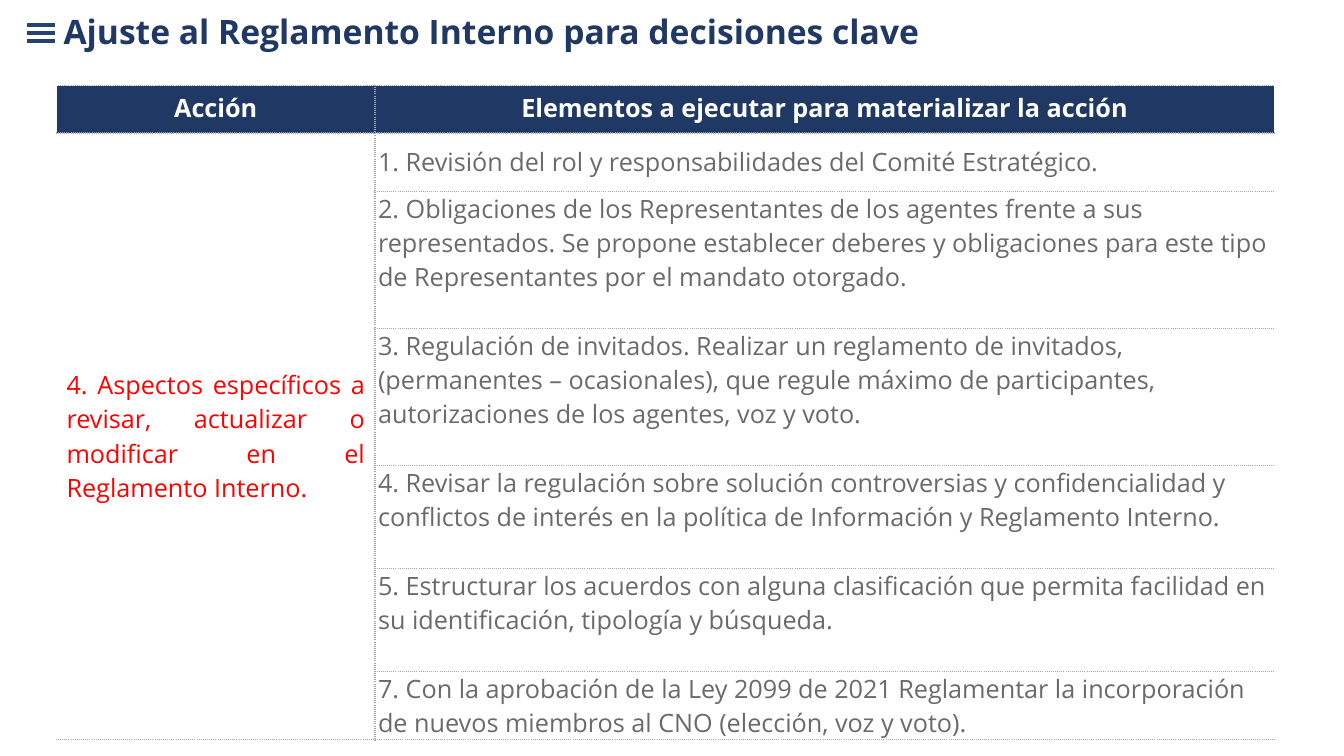
from lxml.etree import SubElement
from pptx import Presentation
from pptx.dml.color import RGBColor
from pptx.enum.shapes import MSO_CONNECTOR as CONN
from pptx.enum.text import MSO_ANCHOR as ANCHOR, MSO_AUTO_SIZE as AUTO, PP_ALIGN as ALIGN
from pptx.oxml import parse_xml
from pptx.oxml.ns import nsdecls, qn
from pptx.util import Inches, Pt

NAVY = RGBColor(0x20, 0x38, 0x64)
ICON = RGBColor(0x27, 0x44, 0x70)
RED = RGBColor(0xFF, 0x00, 0x00)
GRAY = RGBColor(0x6A, 0x6A, 0x6A)
BORDER = RGBColor(0xA6, 0xA6, 0xA6)
WHITE = RGBColor(0xFF, 0xFF, 0xFF)

HEADERS = ["Acción", "Elementos a ejecutar para materializar la acción"]
ACTION = "4. Aspectos específicos a revisar, actualizar o modificar en el Reglamento Interno."
ELEMENTS = [
    (0.58, "1. Revisión del rol y responsabilidades del Comité Estratégico."),
    (1.36, "2. Obligaciones de los Representantes de los agentes frente a sus "
           "representados. Se propone establecer deberes y obligaciones para este "
           "tipo de Representantes por el mandato otorgado."),
    (1.36, "3. Regulación de invitados. Realizar un reglamento de invitados, "
           "(permanentes – ocasionales), que regule máximo de participantes, "
           "autorizaciones de los agentes, voz y voto."),
    (1.02, "4. Revisar la regulación sobre solución controversias y confidencialidad "
           "y conflictos de interés en la política de Información y Reglamento Interno."),
    (1.02, "5. Estructurar los acuerdos con alguna clasificación que permita "
           "facilidad en su identificación, tipología y búsqueda."),
    (0.68, "7. Con la aprobación de la Ley 2099 de 2021 Reglamentar la incorporación "
           "de nuevos miembros al CNO (elección, voz y voto)."),
]


class SlideBuilder:
    """Holds the text style and the current slide."""

    font = "Open Sans"

    def __init__(self, prs):
        self.s = prs.slides.add_slide(prs.slide_layouts[5])

    def style(self, p, size, color, bold=False, align=ALIGN.LEFT):
        p.alignment = align
        p.font.name, p.font.size, p.font.bold = self.font, Pt(size), bold
        p.font.color.rgb = color

    def title(self, text, left, top, width, height):
        sp = self.s.shapes.title
        sp.left, sp.top = Inches(left), Inches(top)
        sp.width, sp.height = Inches(width), Inches(height)
        tf = sp.text_frame
        tf.text = text
        tf.auto_size, tf.vertical_anchor = AUTO.NONE, ANCHOR.MIDDLE
        tf.paragraphs[0].line_spacing = 0.9
        self.style(tf.paragraphs[0], 24, NAVY, True)

    def line(self, x1, x2, y):
        c = self.s.shapes.add_connector(
            CONN.STRAIGHT, Inches(x1), Inches(y), Inches(x2), Inches(y))
        c.line.color.rgb, c.line.width = ICON, Pt(3)
        SubElement(c._element.spPr, qn("a:effectLst"))

    def table(self, left, top, widths, heights):
        tbl = self.s.shapes.add_table(
            len(heights), len(widths), Inches(left), Inches(top),
            Inches(sum(widths)), Inches(sum(heights))).table
        for col, width in zip(tbl.columns, widths):
            col.width = Inches(width)
        for row, height in zip(tbl.rows, heights):
            row.height = Inches(height)
        return tbl

    def cell(self, cell, text, color, fill=WHITE, bold=False,
             align=ALIGN.LEFT, anchor=ANCHOR.TOP):
        cell.text = text
        cell.vertical_anchor = anchor
        cell.fill.solid()
        cell.fill.fore_color.rgb = fill
        self.style(cell.text_frame.paragraphs[0], 18, color, bold, align)

    def borders(self, cell, sides):
        tc_pr = cell._tc.get_or_add_tcPr()
        for i, side in enumerate(sides):
            tc_pr.insert(i, parse_xml(
                f'<a:ln{side} {nsdecls("a")} w="12700"><a:solidFill>'
                f'<a:srgbClr val="{BORDER}"/></a:solidFill>'
                f'<a:prstDash val="sysDot"/></a:ln{side}>'))


def main():
    prs = Presentation()
    prs.slide_width, prs.slide_height = Inches(13.33), Inches(7.5)
    b = SlideBuilder(prs)
    for i in range(3):
        b.line(0.27, 0.55, 0.25 + 0.08 * i)
    b.title("Ajuste al Reglamento Interno para decisiones clave", 0.53, -0.11, 12.7, 0.89)

    tbl = b.table(0.56, 0.85, [3.16, 8.92], [0.47] + [h for h, _ in ELEMENTS])
    for col, text in enumerate(HEADERS):
        b.cell(tbl.cell(0, col), text, WHITE, NAVY, True, ALIGN.CENTER)
    b.cell(tbl.cell(1, 0), ACTION, RED, align=ALIGN.JUSTIFY, anchor=ANCHOR.MIDDLE)
    for row, (_, text) in enumerate(ELEMENTS, 1):
        cell = tbl.cell(row, 1)
        b.cell(cell, text, GRAY, anchor=ANCHOR.MIDDLE if row == 1 else ANCHOR.TOP)
        cell.margin_left = cell.margin_right = Inches(0.03)
        cell.margin_top = cell.margin_bottom = 0
    tbl.cell(1, 0).merge(tbl.cell(len(ELEMENTS), 0))
    for row in range(len(tbl.rows)):
        b.borders(tbl.cell(row, 0), "RTB")
        b.borders(tbl.cell(row, 1), "LTB")
    prs.save("out.pptx")


if __name__ == "__main__":
    main()
